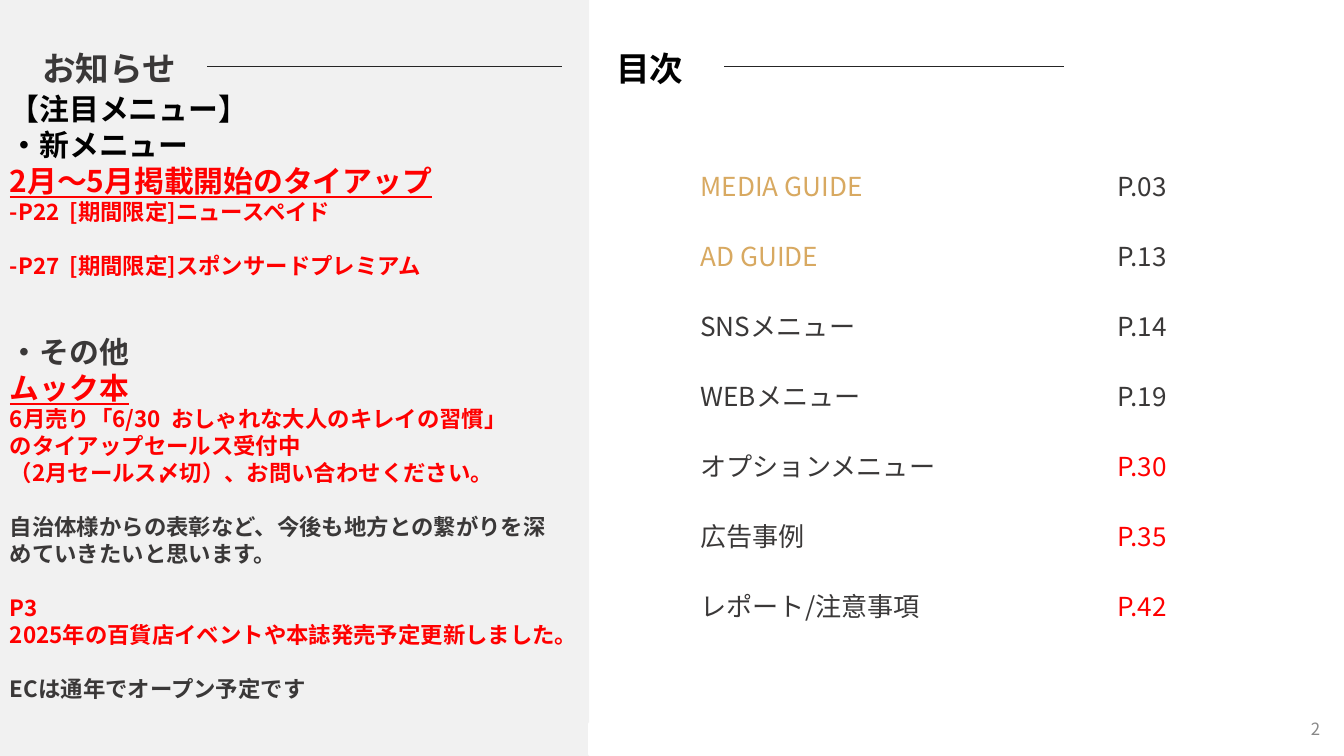
from lxml.etree import SubElement
from pptx import Presentation
from pptx.dml.color import RGBColor
from pptx.enum.shapes import MSO_CONNECTOR as Connector, MSO_SHAPE as Shape
from pptx.enum.text import MSO_ANCHOR as Anchor, PP_ALIGN as Align
from pptx.oxml.ns import qn
from pptx.util import Pt

FONT = "Noto Sans CJK JP"
BLACK = RGBColor(0x00, 0x00, 0x00)
DARK = RGBColor(0x3A, 0x38, 0x38)
RED = RGBColor(0xFF, 0x00, 0x00)
GOLD = RGBColor(0xD8, 0xA9, 0x61)
GREY = RGBColor(0x88, 0x88, 0x88)
PANEL = RGBColor(0xF1, 0xF1, 0xF1)
RULE = RGBColor(0x25, 0x25, 0x25)
WHITE = RGBColor(0xFF, 0xFF, 0xFF)

LINE_RATIO = 1.205
BODY_LINE = 12 * LINE_RATIO

STYLES = {
    "section": (16, BLACK, True, False),
    "other": (16, DARK, True, False),
    "headline": (16, RED, True, True),
    "notice": (12, RED, True, False),
    "remark": (12, DARK, True, False),
    "news title": (18, DARK, True, False),
    "contents title": (18, BLACK, True, False),
    "page number": (9, GREY, False, False),
}

NEWS = [
    ("section", 0, "【注目メニュー】"),
    ("section", 0, "・新メニュー"),
    ("headline", 0, "2月～5月掲載開始のタイアップ"),
    ("notice", 0, "-P22  [期間限定]ニュースペイド"),
    ("notice", 1, "-P27  [期間限定]スポンサードプレミアム"),
    ("other", 2, "・その他"),
    ("headline", 0, "ムック本"),
    ("notice", 0, "6月売り「6/30  おしゃれな大人のキレイの習慣」"),
    ("notice", 0, "のタイアップセールス受付中"),
    ("notice", 0, "（2月セールス〆切）、お問い合わせください。"),
    ("remark", 1, "自治体様からの表彰など、今後も地方との繋がりを深めていきたいと思います。"),
    ("notice", 1, "P3"),
    ("notice", 0, "2025年の百貨店イベントや本誌発売予定更新しました。"),
    ("remark", 1, "ECは通年でオープン予定です"),
]

CONTENTS = [
    ("MEDIA GUIDE", GOLD, "P.03", DARK),
    ("AD GUIDE", GOLD, "P.13", DARK),
    ("SNSメニュー", DARK, "P.14", DARK),
    ("WEBメニュー", DARK, "P.19", DARK),
    ("オプションメニュー", DARK, "P.30", RED),
    ("広告事例", DARK, "P.35", RED),
    ("レポート/注意事項", DARK, "P.42", RED),
]

HEADINGS = [
    ("news title", "お知らせ", 22.6, 85, 111, 301),
    ("contents title", "目次", 330.2, 37.4, 388, 570),
]
HEADING_TOP, HEADING_HEIGHT, RULE_TOP = 25, 22.3, 35.8
COLUMNS, ROW_HEIGHT = (223.2, 69.1), 37.5


def write(paragraph, text, size, color, bold=False, underline=False):
    run = paragraph.add_run()
    run.text = text
    formats = {"name": FONT, "size": Pt(size), "bold": bold, "underline": underline}
    for key, value in formats.items():
        setattr(run.font, key, value)
    run.font.color.rgb = color
    SubElement(run.font._element, qn("a:ea"), typeface=FONT)


def add_text(slide, box, lines, margins=(0, 0, 0, 0), wrap=False, **frame_formats):
    frame = slide.shapes.add_textbox(*map(Pt, box)).text_frame
    sides = ("margin_left", "margin_top", "margin_right", "margin_bottom")
    formats = {**dict(zip(sides, map(Pt, margins))), "word_wrap": wrap, **frame_formats}
    for key, value in formats.items():
        setattr(frame, key, value)
    for index, (style, gap, text) in enumerate(lines):
        paragraph = frame.add_paragraph() if index else frame.paragraphs[0]
        paragraph.line_spacing = Pt(STYLES[style][0] * LINE_RATIO)
        if gap:
            paragraph.space_before = Pt(gap * BODY_LINE)
        write(paragraph, text, *STYLES[style])
    return frame


def add_block(slide, box, fill, line=None):
    block = slide.shapes.add_shape(Shape.RECTANGLE, *map(Pt, box))
    block.shadow.inherit = False
    block.fill.solid()
    block.fill.fore_color.rgb = fill
    if line:
        block.line.color.rgb = line
        block.line.width = Pt(2)
    else:
        block.line.fill.background()


def add_rule(slide, start, end):
    rule = slide.shapes.add_connector(
        Connector.STRAIGHT, Pt(start), Pt(RULE_TOP), Pt(end), Pt(RULE_TOP))
    rule.line.color.rgb = RULE
    rule.line.width = Pt(0.75)
    SubElement(rule._element.spPr, qn("a:effectLst"))


def add_contents(slide):
    table = slide.shapes.add_table(
        len(CONTENTS), len(COLUMNS), Pt(368), Pt(80.6),
        Pt(sum(COLUMNS)), Pt(ROW_HEIGHT * len(CONTENTS))).table
    for key in ("first_row", "horz_banding"):
        setattr(table, key, False)
    for column, width in zip(table.columns, COLUMNS):
        column.width = Pt(width)
    for row, (menu, menu_color, page, page_color) in zip(table.rows, CONTENTS):
        row.height = Pt(ROW_HEIGHT)
        for cell, text, color in zip(row.cells, (menu, page), (menu_color, page_color)):
            cell.fill.background()
            cell.vertical_anchor = Anchor.MIDDLE
            write(cell.text_frame.paragraphs[0], text, 14, color)


def main():
    deck = Presentation()
    deck.slide_width, deck.slide_height = Pt(720), Pt(405)
    slide = deck.slides.add_slide(deck.slide_layouts[6])
    add_block(slide, (0, 0, 315.7, 405), PANEL)
    for style, title, left, width, start, end in HEADINGS:
        add_text(slide, (left, HEADING_TOP, width, HEADING_HEIGHT),
                 [(style, 0, title)], (0, 0.7, 0, 0))
        add_rule(slide, start, end)
    add_text(slide, (5.3, 42, 293, 360), NEWS, (0, 6.5, 0, 0), wrap=True)
    number = add_text(slide, (693.4, 384.5, 20.9, 12.2), [("page number", 0, "2")],
                      (7.2, 3.6, 7.2, 3.6), wrap=True, vertical_anchor=Anchor.MIDDLE)
    number.paragraphs[0].alignment = Align.RIGHT
    add_contents(slide)
    add_block(slide, (316, 388, 182, 16), WHITE, WHITE)
    deck.save("out.pptx")


if __name__ == "__main__":
    main()
